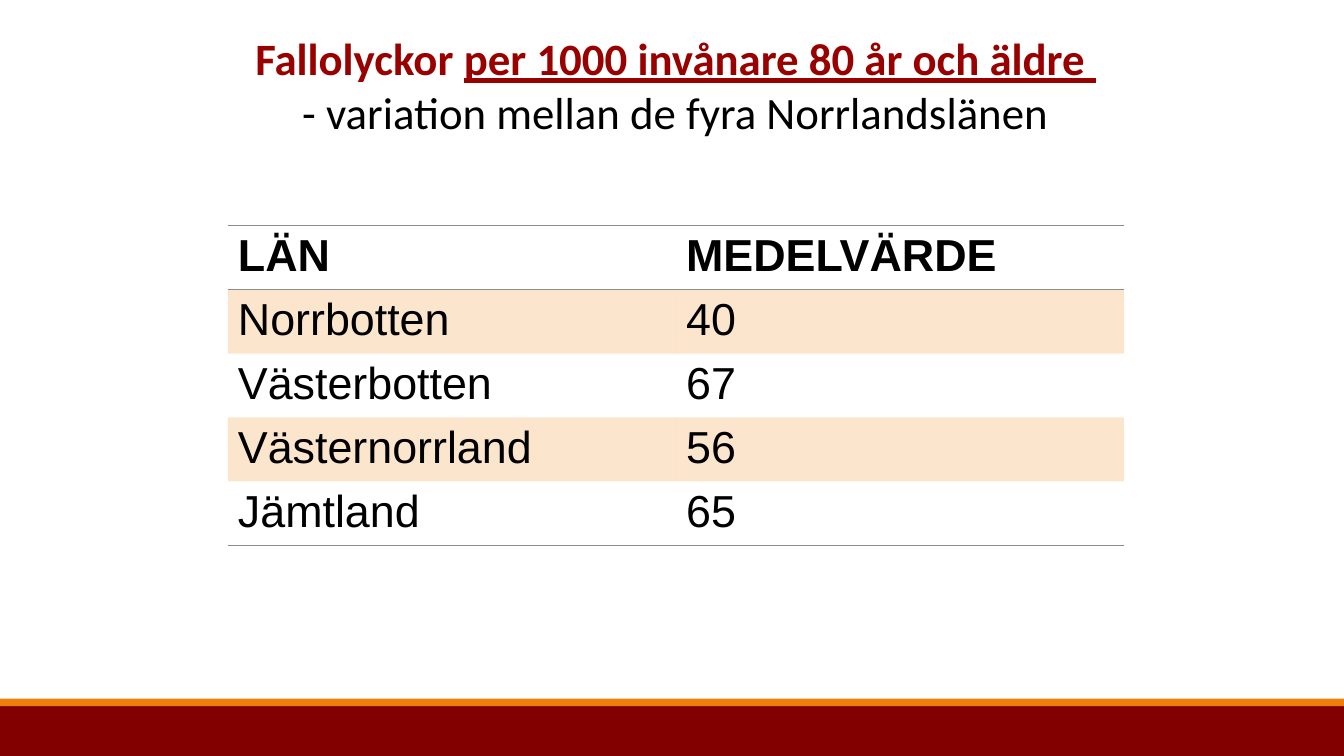
import pptx
import pptx.dml.color
import pptx.enum.shapes
import pptx.enum.text
import pptx.oxml
import pptx.oxml.ns
import pptx.util

WIDTH, HEIGHT = pptx.util.Inches(13.33), pptx.util.Inches(7.5)
COLORS = {"maroon": "820000", "orange": "F07F09", "title": "990000",
          "text": "000000", "rule": "8C8C8C"}
COUNTIES = [("LÄN", "MEDELVÄRDE"), ("Norrbotten", "40"), ("Västerbotten", "67"),
            ("Västernorrland", "56"), ("Jämtland", "65")]


def rgb(name):
    """Return the named colour."""
    return pptx.dml.color.RGBColor.from_string(COLORS[name])


def add_text(para, text, font="Arial", size=32, color="text", bold=False, underline=False):
    """Add a formatted span to a paragraph."""
    span = para.add_run()
    span.text = text
    span.font.name = font
    span.font.size = pptx.util.Pt(size)
    span.font.bold = bold
    span.font.underline = underline
    span.font.color.rgb = rgb(color)


def add_band(page, top, height, color):
    """Draw a full-width band from shares of the slide height."""
    band = page.shapes.add_shape(
        pptx.enum.shapes.MSO_SHAPE.RECTANGLE, 0, int(HEIGHT * top), WIDTH, int(HEIGHT * height))
    band.shadow.inherit = False
    band.fill.solid()
    band.fill.fore_color.rgb = rgb(color)
    band.line.fill.background()


def add_title(page):
    """Write the centred two-line title."""
    box = page.shapes.add_textbox(*map(pptx.util.Inches, (1.88, 0.26, 9.64, 1.18)))
    frame = box.text_frame
    frame.word_wrap = True
    heading, subtitle = frame.paragraphs[0], frame.add_paragraph()
    for para in (heading, subtitle):
        para.alignment = pptx.enum.text.PP_ALIGN.CENTER
    add_text(heading, "Fallolyckor ", font="Calibri", color="title", bold=True)
    add_text(heading, "per 1000 invånare 80 år och äldre ", font="Calibri",
             color="title", bold=True, underline=True)
    add_text(subtitle, "- variation mellan de fyra Norrlandslänen", font="Calibri")


def set_borders(cell, ruled):
    """Rule the given sides of a cell and clear the others."""
    properties = cell._tc.get_or_add_tcPr()
    for position, side in enumerate("LRTB"):
        paint = (f'<a:solidFill><a:srgbClr val="{COLORS["rule"]}"/></a:solidFill>'
                 if side in ruled else "<a:noFill/>")
        properties.insert(position, pptx.oxml.parse_xml(
            f'<a:ln{side} {pptx.oxml.ns.nsdecls("a")} w="12700">{paint}</a:ln{side}>'))


def tint(cell, color, percent):
    """Fill a cell with a partly transparent colour."""
    cell.fill.solid()
    cell.fill.fore_color.rgb = rgb(color)
    swatch = cell._tc.tcPr.find(".//" + pptx.oxml.ns.qn("a:srgbClr"))
    swatch.append(pptx.oxml.parse_xml(
        f'<a:alpha {pptx.oxml.ns.nsdecls("a")} val="{percent * 1000}"/>'))


def add_county_table(page):
    """Build the banded table of county means."""
    row_height = 0.6
    table = page.shapes.add_table(
        len(COUNTIES), 2, *map(pptx.util.Inches, (2.26, 2.24, 8.89, row_height * len(COUNTIES)))).table
    table.first_row = table.horz_banding = False
    ruled_sides = {0: "TB", 1: "T", len(COUNTIES) - 1: "B"}
    for row, values in enumerate(COUNTIES):
        for column, value in enumerate(values):
            cell = table.cell(row, column)
            if row % 2:
                tint(cell, "orange", 20)
            else:
                cell.fill.background()
            set_borders(cell, ruled_sides.get(row, ""))
            add_text(cell.text_frame.paragraphs[0], value, bold=row == 0)


def main():
    """Build and save the slide."""
    deck = pptx.Presentation()
    deck.slide_width, deck.slide_height = WIDTH, HEIGHT
    page = deck.slides.add_slide(deck.slide_layouts[6])
    add_band(page, 14 / 15, 1 / 15, "maroon")
    add_band(page, 0.924, 0.01, "orange")
    add_title(page)
    add_county_table(page)
    deck.save("out.pptx")


if __name__ == "__main__":
    main()
